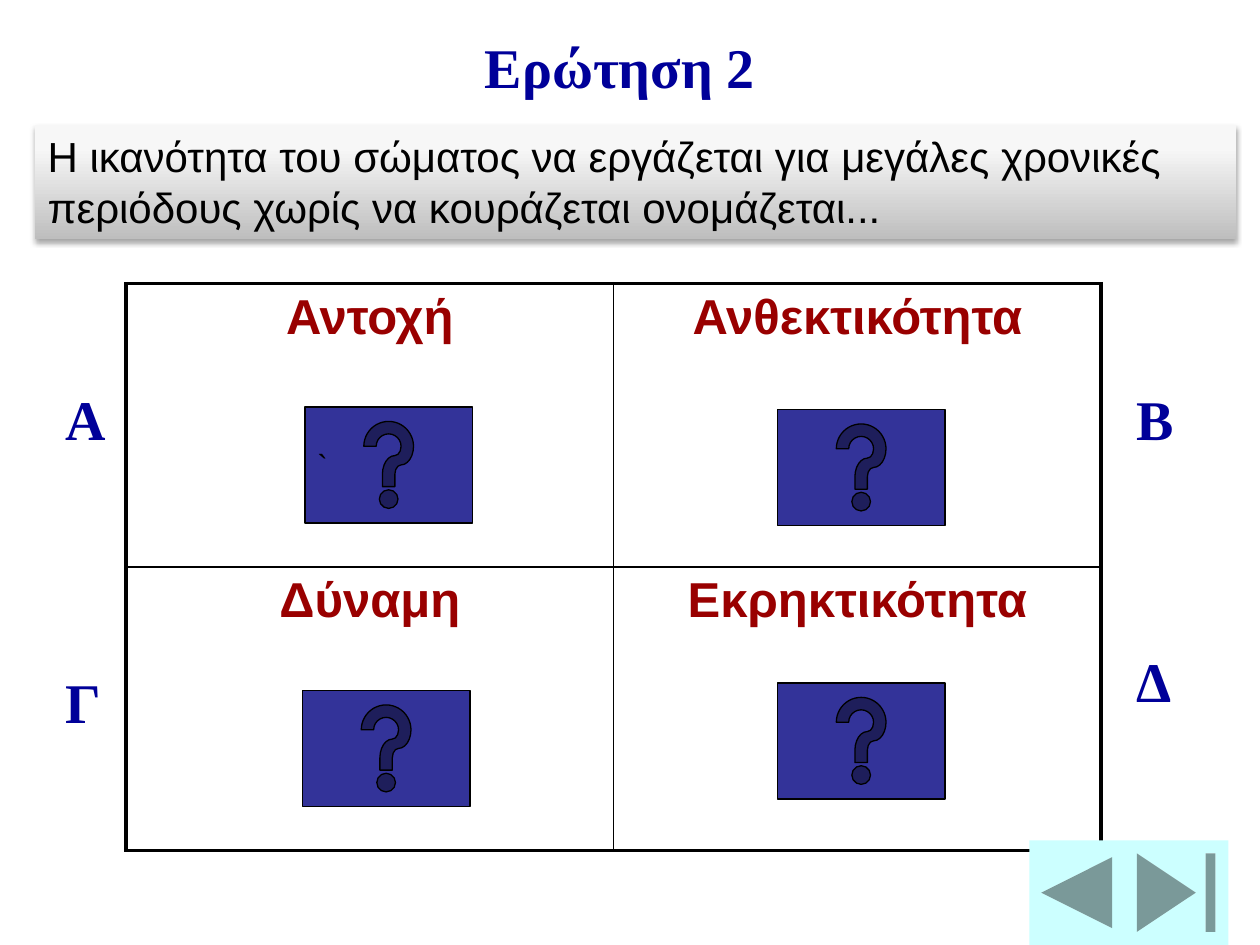
from lxml import etree
from pptx import Presentation
from pptx.dml.color import RGBColor
from pptx.enum.shapes import MSO_SHAPE
from pptx.enum.text import MSO_ANCHOR, PP_ALIGN
from pptx.oxml import parse_xml
from pptx.oxml.ns import nsdecls, qn
from pptx.util import Inches, Pt

HELP = MSO_SHAPE.ACTION_BUTTON_HELP
END = MSO_SHAPE.ACTION_BUTTON_END
BACK = MSO_SHAPE.ACTION_BUTTON_BACK_OR_PREVIOUS
RECT = MSO_SHAPE.RECTANGLE
LEFT, CENTER = PP_ALIGN.LEFT, PP_ALIGN.CENTER
TOP, MIDDLE = MSO_ANCHOR.TOP, MSO_ANCHOR.MIDDLE

COLORS = {
    "black": "000000", "white": "FFFFFF", "navy": "000099", "red": "990000",
    "indigo": "333399", "cyan": "CCFFFF",
}
QUESTION = ("Η ικανότητα του σώματος να εργάζεται για μεγάλες χρονικές "
            "περιόδους χωρίς να κουράζεται ονομάζεται...")
ANSWERS = [["Αντοχή", "Ανθεκτικότητα"], ["Δύναμη", "Εκρηκτικότητα"]]
GRID = (1, 2.25, 7.74, 4.5)
LABELS = [  # text, left, top, width
    ("Α", 0.42, 3, 0.5), ("Γ", 0.42, 5.25, 0.5),
    ("Β", 8.92, 3, 0.5), ("Δ", 8.92, 5.08, 0.5),
    ("Ερώτηση 2", 3.75, 0.21, 2.67),
]
BUTTONS = [  # left, top, text
    (2.42, 3.23, "`"), (6.17, 5.42, ""), (6.17, 3.25, ""), (2.4, 5.48, ""),
]
ARROWS = [(END, 8.92, 0.83), (BACK, 8.17, 0.75)]
SHADE = [(0, "BEBEBE"), (80, "F7F7F7"), (100, "F8F8F8")]


def rgb(name):
    return RGBColor.from_string(COLORS[name])


def write(frame, text, size=18, font="Arial", color="black", bold=False,
          align=LEFT, anchor=TOP, before=0, wrap=True):
    frame.word_wrap = wrap
    frame.vertical_anchor = anchor
    para = frame.paragraphs[0]
    para.alignment = align
    para.space_before = Pt(before)
    run = para.add_run()
    run.text = text
    run.font.size, run.font.name, run.font.bold = Pt(size), font, bold
    run.font.color.rgb = rgb(color)


def add_box(slide, kind, box, fill=None, line=None):
    shape = slide.shapes.add_shape(kind, *map(Inches, box))
    shape.shadow.inherit = False
    if fill:
        shape.fill.solid()
        shape.fill.fore_color.rgb = rgb(fill)
    if line:
        shape.line.color.rgb = rgb(line)
        shape.line.width = Pt(0.75)
    else:
        shape.line.fill.background()
    return shape


def set_edges(cell, widths):
    props = cell._tc.get_or_add_tcPr()
    for spot, (side, width) in enumerate(widths.items()):
        props.insert(spot, parse_xml(
            f'<a:ln{side} {nsdecls("a")} w="{Pt(width)}"><a:solidFill>'
            f'<a:srgbClr val="{COLORS["black"]}"/></a:solidFill></a:ln{side}>'))


def add_grid(slide):
    rows, cols = len(ANSWERS), len(ANSWERS[0])
    table = slide.shapes.add_table(rows, cols, *map(Inches, GRID)).table
    table.first_row = table.horz_banding = False
    for r, row in enumerate(ANSWERS):
        for c, text in enumerate(row):
            cell = table.cell(r, c)
            cell.fill.solid()
            cell.fill.fore_color.rgb = rgb("white")
            outer = {"L": c == 0, "R": c == cols - 1,
                     "T": r == 0, "B": r == rows - 1}
            set_edges(cell, {k: 2.25 if v else 1 for k, v in outer.items()})
            write(cell.text_frame, text, size=28, color="red", bold=True,
                  align=CENTER)


def add_banner(slide):
    shape = add_box(slide, RECT, (0.28, 0.99, 9.53, 0.91), fill="white")
    props = shape._element.spPr
    stops = "".join(f'<a:gs pos="{pos * 1000}"><a:srgbClr val="{val}"/></a:gs>'
                    for pos, val in SHADE)
    props.replace(props.find(qn("a:solidFill")), parse_xml(
        f'<a:gradFill {nsdecls("a")} rotWithShape="1"><a:gsLst>{stops}</a:gsLst>'
        f'<a:lin ang="{270 * 60000}" scaled="0"/></a:gradFill>'))
    glow = etree.SubElement(
        props.find(qn("a:effectLst")), qn("a:outerShdw"), blurRad=str(Pt(3.1)),
        dist=str(Pt(1.8)), dir=str(90 * 60000), rotWithShape="0")
    tint = etree.SubElement(glow, qn("a:srgbClr"), val=COLORS["black"])
    etree.SubElement(tint, qn("a:alpha"), val="35000")
    write(shape.text_frame, QUESTION, size=24)


def main():
    deck = Presentation()
    deck.slide_width, deck.slide_height = Inches(10), Inches(7.5)
    slide = deck.slides.add_slide(deck.slide_layouts[6])
    add_grid(slide)
    for text, left, top, width in LABELS:
        box = slide.shapes.add_textbox(*map(Inches, (left, top, width, 0.63)))
        write(box.text_frame, text, size=32, font="Times New Roman",
              color="navy", bold=True, before=4)
    for left, top, text in BUTTONS:
        shape = add_box(slide, HELP, (left, top, 1.33, 0.92), "indigo", "black")
        if text:
            write(shape.text_frame, text, anchor=MIDDLE, wrap=False)
    for kind, left, width in ARROWS:
        add_box(slide, kind, (left, 6.67, width, 0.83), "cyan")
    add_banner(slide)
    deck.save("out.pptx")


if __name__ == "__main__":
    main()
